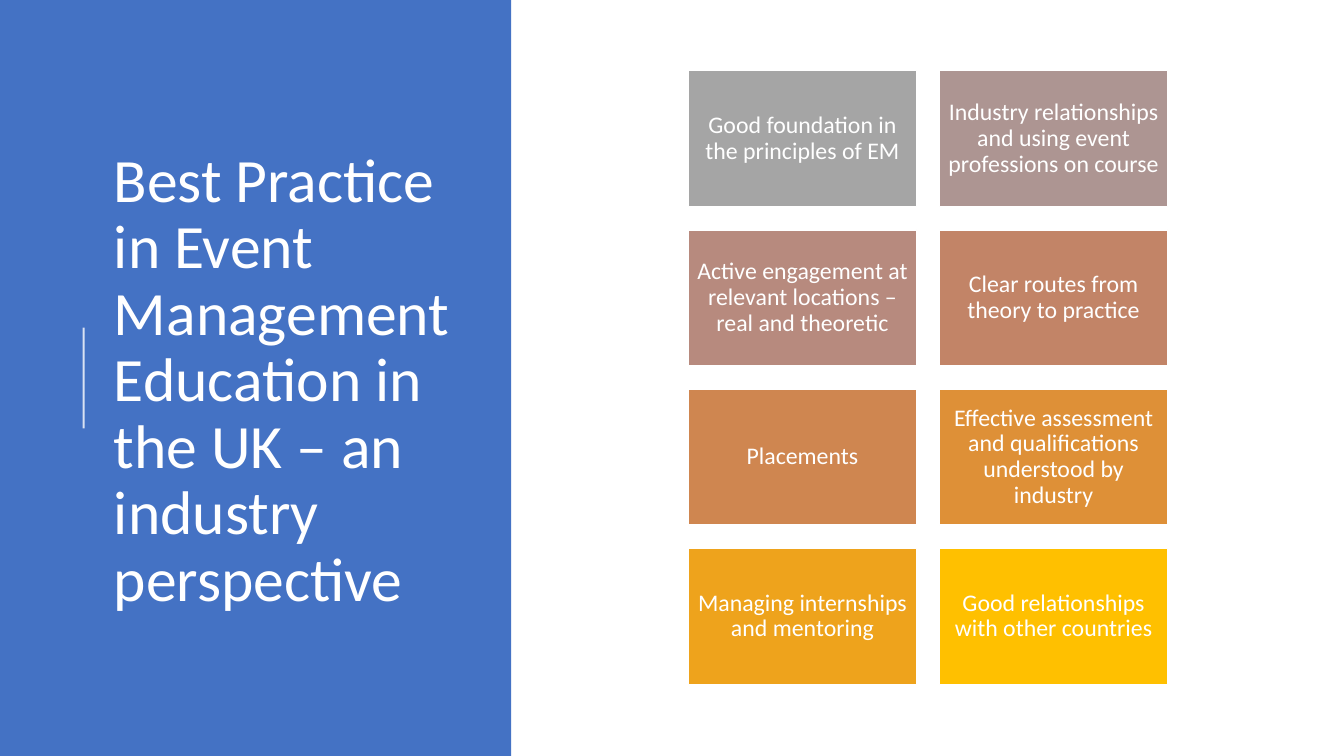
from lxml import etree
from pptx import Presentation
from pptx.dml.color import RGBColor
from pptx.enum import shapes, text
from pptx.oxml.ns import qn
from pptx.util import Inches, Pt

WHITE = RGBColor(0xFF, 0xFF, 0xFF)
BLUE = RGBColor(0x44, 0x72, 0xC4)
PRACTICES = [
    ("Good foundation in the principles of EM", RGBColor(0xA5, 0xA5, 0xA5)),
    ("Industry relationships and using event professions on course", RGBColor(0xAD, 0x95, 0x92)),
    ("Active engagement at relevant locations – real and theoretic", RGBColor(0xB7, 0x8A, 0x7E)),
    ("Clear routes from theory to practice", RGBColor(0xC2, 0x84, 0x67)),
    ("Placements", RGBColor(0xCF, 0x86, 0x50)),
    ("Effective assessment and qualifications understood by industry", RGBColor(0xDE, 0x90, 0x37)),
    ("Managing internships and mentoring", RGBColor(0xEE, 0xA3, 0x1C)),
    ("Good relationships with other countries", RGBColor(0xFF, 0xC0, 0x00)),
]
COLUMNS = 2


def add_rectangle(left, top, width, height, color):
    rectangle = slide.shapes.add_shape(
        shapes.MSO_SHAPE.RECTANGLE, Inches(left), Inches(top), Inches(width), Inches(height))
    rectangle.shadow.inherit = False
    rectangle.fill.solid()
    rectangle.fill.fore_color.rgb = color
    return rectangle


def write_text(shape, wording, size, alignment):
    frame = shape.text_frame
    frame.text = wording
    frame.word_wrap = True
    frame.auto_size = text.MSO_AUTO_SIZE.NONE
    frame.vertical_anchor = text.MSO_ANCHOR.MIDDLE
    paragraph = frame.paragraphs[0]
    paragraph.alignment = alignment
    paragraph.line_spacing = 0.9
    font = paragraph.runs[0].font
    font.name = "Calibri"
    font.size = Pt(size)
    font.color.rgb = WHITE


presentation = Presentation()
presentation.slide_width = Inches(13.33)
presentation.slide_height = Inches(7.5)
slide = presentation.slides.add_slide(presentation.slide_layouts.get_by_name("Title Only"))

# Blue side panel with its accent line, behind the title
panel = add_rectangle(0, 0, 5.07, 7.5, BLUE)
panel.line.fill.background()

accent = slide.shapes.add_connector(
    shapes.MSO_CONNECTOR.STRAIGHT, Inches(0.83), Inches(4.25), Inches(0.83), Inches(3.25))
accent.line.color.rgb = WHITE
accent.line.width = Pt(1.5)
accent_color = accent.element.spPr.find(".//" + qn("a:srgbClr"))
etree.SubElement(accent_color, qn("a:alpha"), val="80000")
etree.SubElement(accent.element.spPr, qn("a:effectLst"))

title = slide.shapes.title
title.left, title.top = Inches(1.03), Inches(0.78)
title.width, title.height = Inches(3.69), Inches(6.02)
write_text(title, "Best Practice in Event Management Education in the UK – an industry perspective",
           44, text.PP_ALIGN.LEFT)
slide.shapes.element.append(title.element)

# Grid of practices
for index, (wording, color) in enumerate(PRACTICES):
    row, column = divmod(index, COLUMNS)
    box = add_rectangle(6.83 + 2.49 * column, 0.7 + 1.58 * row, 2.26, 1.35, color)
    box.line.color.rgb = WHITE
    box.line.width = Pt(1)
    write_text(box, wording, 17, text.PP_ALIGN.CENTER)
    frame = box.text_frame
    frame.margin_left = frame.margin_right = Inches(0.07)
    frame.margin_top = frame.margin_bottom = Inches(0.07)

presentation.save("out.pptx")
